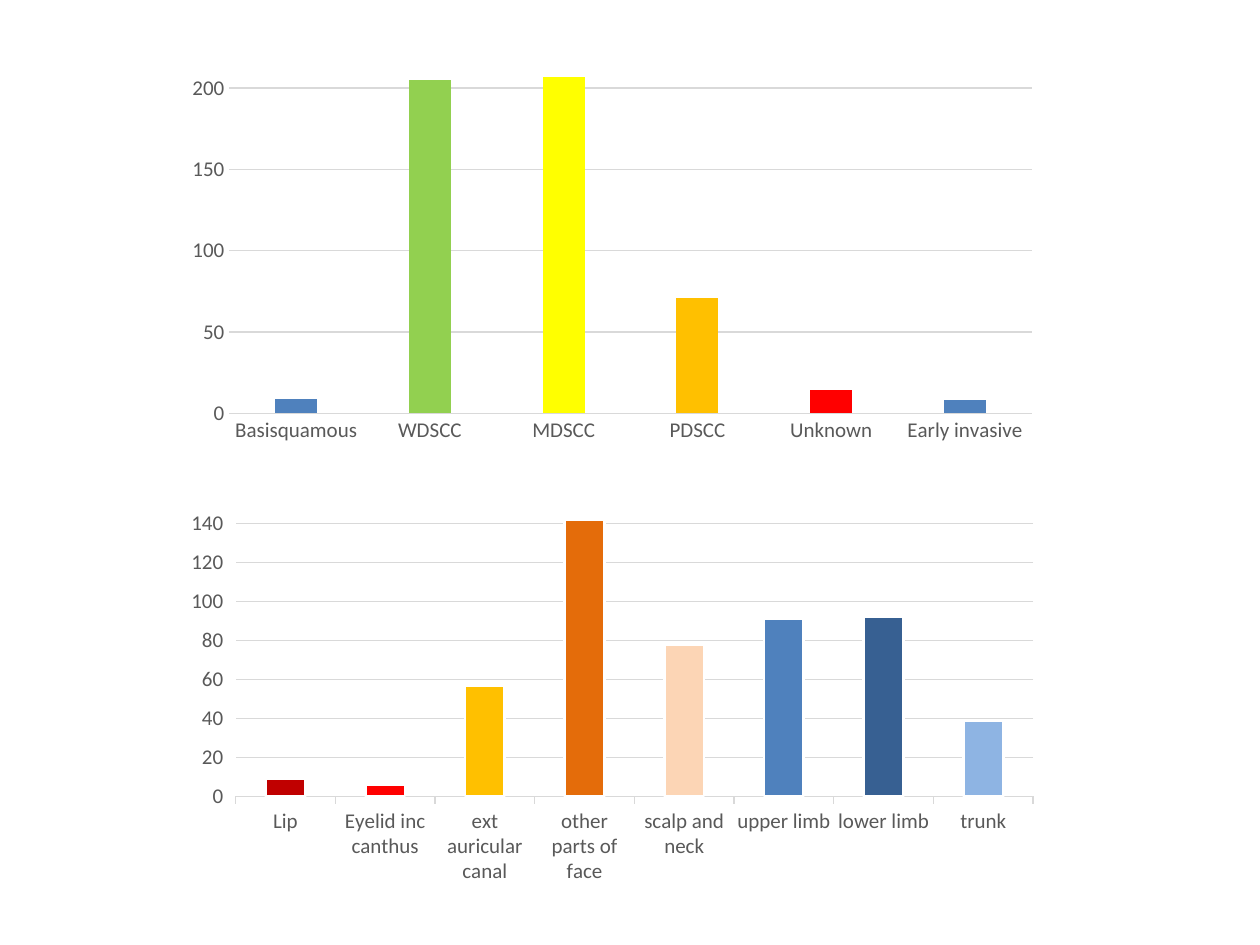
from lxml.etree import SubElement
from pptx import Presentation
from pptx.chart.data import CategoryChartData
from pptx.dml.color import RGBColor
from pptx.enum.chart import XL_CHART_TYPE, XL_TICK_MARK
from pptx.oxml.ns import qn
from pptx.util import Inches, Pt

GREY_TEXT = RGBColor(0x59, 0x59, 0x59)
GRID_GREY = RGBColor(0xD9, 0xD9, 0xD9)
WHITE = RGBColor(0xFF, 0xFF, 0xFF)
BLUE = RGBColor(0x4F, 0x81, 0xBD)
GREEN = RGBColor(0x92, 0xD0, 0x50)
YELLOW = RGBColor(0xFF, 0xFF, 0x00)
AMBER = RGBColor(0xFF, 0xC0, 0x00)
RED = RGBColor(0xFF, 0x00, 0x00)
DARK_RED = RGBColor(0xC0, 0x00, 0x00)
ORANGE = RGBColor(0xE4, 0x6C, 0x0A)
PEACH = RGBColor(0xFC, 0xD5, 0xB5)
NAVY = RGBColor(0x37, 0x60, 0x92)
LIGHT_BLUE = RGBColor(0x8E, 0xB4, 0xE3)

CHART_LEFT, CHART_WIDTH, CHART_HEIGHT = 1.38, 6.96, 3.7

SITES = {
    "bars": [
        ("Lip", 9, DARK_RED),
        ("Eyelid inc canthus", 6, RED),
        ("ext auricular canal", 57, AMBER),
        ("other parts of face", 142, ORANGE),
        ("scalp and neck", 78, PEACH),
        ("upper limb", 91, BLUE),
        ("lower limb", 92, NAVY),
        ("trunk", 39, LIGHT_BLUE),
    ],
    "top": 3.39,
    "plot_area": (1.87, 4.08, 6.33, 2.24),
    "scale": {"minimum_scale": 0, "maximum_scale": 145, "major_unit": 20},
    "spacing": {"gap_width": 150, "overlap": 0},
    "tick_mark": XL_TICK_MARK.OUTSIDE,
    "outline": WHITE,
}
DIFFERENTIATION = {
    "bars": [
        ("Basisquamous", 9, BLUE),
        ("WDSCC", 205, GREEN),
        ("MDSCC", 207, YELLOW),
        ("PDSCC", 71, AMBER),
        ("Unknown", 14, RED),
        ("Early invasive", 8, BLUE),
    ],
    "top": -0.11,
    "plot_area": (1.82, 0.57, 6.37, 2.71),
    "scale": {"minimum_scale": 0, "maximum_scale": 210, "major_unit": 50},
    "spacing": {"gap_width": 219, "overlap": -27},
    "tick_mark": XL_TICK_MARK.NONE,
    "outline": None,
}


def apply_format(target, values):
    for name, value in values.items():
        setattr(target, name, value)


def style_line(line, color, width):
    line.color.rgb = color
    line.width = Pt(width)


def style_axis(axis, tick_mark):
    apply_format(axis, {"major_tick_mark": tick_mark,
                        "minor_tick_mark": XL_TICK_MARK.NONE})
    font = axis.tick_labels.font
    apply_format(font, {"name": "Calibri", "size": Pt(12), "bold": False})
    font.color.rgb = GREY_TEXT


def place_plot_area(chart, area, chart_top):
    """Fix the inner plot area, given in slide inches, inside its chart."""
    plot_area = chart._chartSpace.find(f"{qn('c:chart')}/{qn('c:plotArea')}")
    for automatic in plot_area.findall(qn("c:layout")):
        plot_area.remove(automatic)
    layout = SubElement(plot_area, qn("c:layout"))
    plot_area.insert(0, layout)
    manual = SubElement(layout, qn("c:manualLayout"))
    left, top, width, height = area
    settings = {
        "layoutTarget": "inner", "xMode": "edge", "yMode": "edge",
        "x": (left - CHART_LEFT) / CHART_WIDTH,
        "y": (top - chart_top) / CHART_HEIGHT,
        "w": width / CHART_WIDTH,
        "h": height / CHART_HEIGHT,
    }
    for tag, value in settings.items():
        SubElement(manual, qn(f"c:{tag}")).set("val", str(value))


def color_bars(series, colors, outline):
    for index, color in enumerate(colors):
        bar = series.points[index].format
        bar.fill.solid()
        bar.fill.fore_color.rgb = color
        if outline is not None:
            style_line(bar.line, outline, 1.5)


def add_case_chart(slide, content):
    categories, counts, colors = zip(*content["bars"])
    data = CategoryChartData()
    data.categories = categories
    data.add_series("", counts)
    chart = slide.shapes.add_chart(
        XL_CHART_TYPE.COLUMN_CLUSTERED, Inches(CHART_LEFT),
        Inches(content["top"]), Inches(CHART_WIDTH), Inches(CHART_HEIGHT),
        data).chart
    apply_format(chart, {"has_title": False, "has_legend": False})
    apply_format(chart.font, {"name": "Calibri", "size": Pt(10)})

    category_axis, value_axis = chart.category_axis, chart.value_axis
    for axis in (category_axis, value_axis):
        style_axis(axis, content["tick_mark"])
    style_line(category_axis.format.line, GRID_GREY, 0.75)
    value_axis.format.line.fill.background()
    apply_format(value_axis, {"has_major_gridlines": True, **content["scale"]})
    style_line(value_axis.major_gridlines.format.line, GRID_GREY, 0.75)

    plot = chart.plots[0]
    apply_format(plot, {"vary_by_categories": False, **content["spacing"]})
    color_bars(plot.series[0], colors, content["outline"])
    place_plot_area(chart, content["plot_area"], content["top"])


def main():
    deck = Presentation()
    apply_format(deck, {"slide_width": Inches(10), "slide_height": Inches(7.5)})
    slide = deck.slides.add_slide(deck.slide_layouts[6])
    for content in (SITES, DIFFERENTIATION):
        add_case_chart(slide, content)
    deck.save("out.pptx")


if __name__ == "__main__":
    main()
